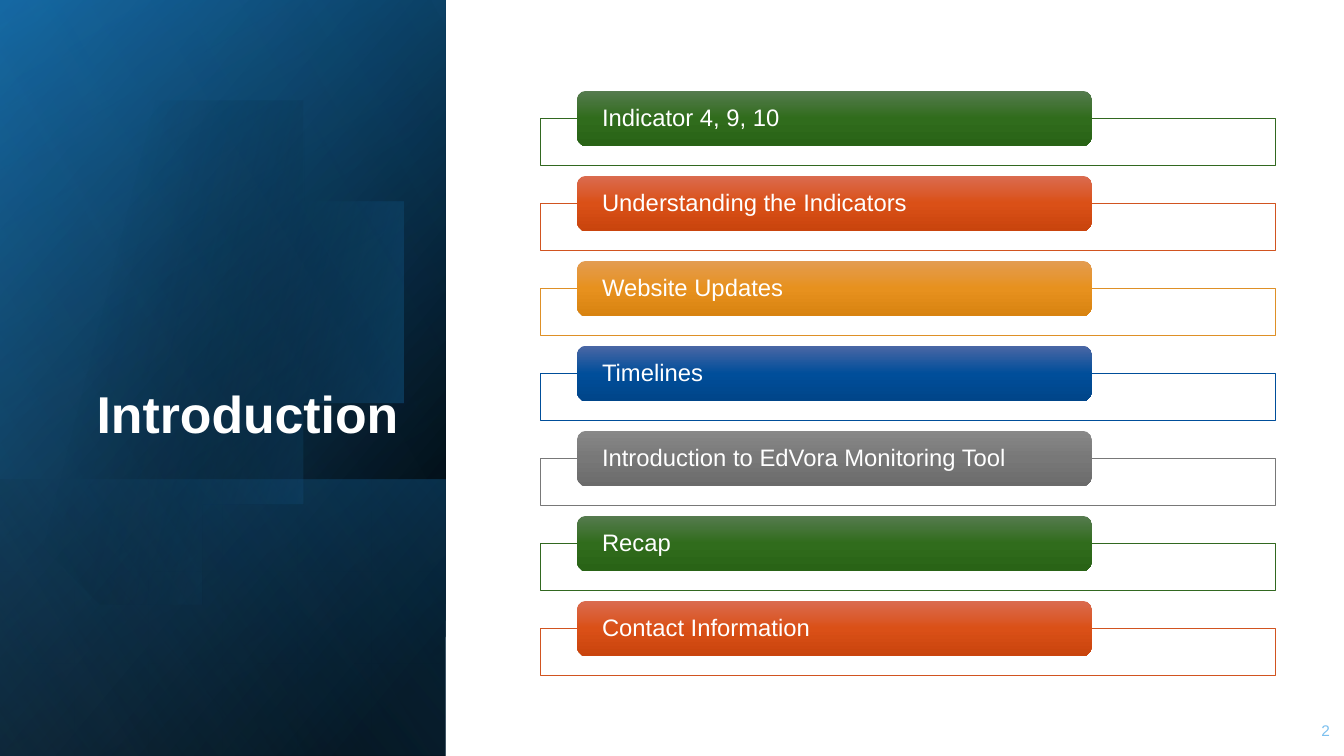
from math import cos, radians, sin

from pptx import Presentation
from pptx.dml.color import RGBColor
from pptx.enum.shapes import MSO_SHAPE
from pptx.enum.text import MSO_ANCHOR, PP_ALIGN
from pptx.oxml import parse_xml
from pptx.util import Inches, Pt

RECT, ROUND = MSO_SHAPE.RECTANGLE, MSO_SHAPE.ROUNDED_RECTANGLE
LEFT, RIGHT = PP_ALIGN.LEFT, PP_ALIGN.RIGHT
MIDDLE, BOTTOM = MSO_ANCHOR.MIDDLE, MSO_ANCHOR.BOTTOM
NS = "http://schemas.openxmlformats.org/drawingml/2006/main"
W, H = 13.33, 7.5
PANEL_W = 4.42
BAND_H = 2.74


def gradient(sp, stops, angle):
    sp.shadow.inherit = False
    sp.line.fill.background()
    gs = "".join(
        f'<a:gs pos="{pos * 1000}"><a:srgbClr val="{color}">'
        f'<a:alpha val="{alpha * 1000}"/></a:srgbClr></a:gs>'
        for pos, color, alpha in stops)
    fill = parse_xml(
        f'<a:gradFill xmlns:a="{NS}" rotWithShape="1"><a:gsLst>{gs}</a:gsLst>'
        f'<a:lin ang="{angle * 60000}" scaled="0"/></a:gradFill>')
    sp._element.spPr[1].addnext(fill)


def write(sp, text, size, color, align, anchor, bold=False):
    tf = sp.text_frame
    tf.word_wrap = True
    tf.vertical_anchor = anchor
    p = tf.paragraphs[0]
    p.alignment = align
    p.line_spacing = 0.9
    r = p.add_run()
    r.text = text
    r.font.name = "Arial"
    r.font.size = Pt(size)
    r.font.bold = bold
    r.font.color.rgb = RGBColor.from_string(color)
    return tf


prs = Presentation()
prs.slide_width, prs.slide_height = Inches(W), Inches(H)
s = prs.slides.add_slide(prs.slide_layouts[6])

panel_layers = [
    (H, [(8, "000000", 100), (100, "125C90", 100)], 50),
    (H, [(0, "000000", 0), (99, "187BC0", 46)], 30),
    (BAND_H, [(2, "187BC0", 29), (100, "000000", 30)], 130),
    (None, [(29, "000000", 0), (100, "187BC0", 43)], 14),
    (H, [(0, "000000", 0), (99, "62B3EB", 11)], 120),
]
CX, CY, RADIUS = 1.42, 3.38, 2.3
arc = [(CX + RADIUS * cos(radians(a)), CY + RADIUS * sin(radians(a)))
       for a in range(-128, 129, 2)]
for height, stops, angle in panel_layers:
    if height is None:
        fb = s.shapes.build_freeform(*arc[0], scale=Inches(1))
        fb.add_line_segments(arc[1:], close=True)
        sp = fb.convert_to_shape()
    else:
        sp = s.shapes.add_shape(
            RECT, Inches((PANEL_W - height) / 2), Inches(H - (height + PANEL_W) / 2),
            Inches(height), Inches(PANEL_W))
        sp.rotation = 90
        sp._element.spPr.xfrm.set("flipH", "1")
    gradient(sp, stops, angle)

title = s.shapes.add_textbox(Inches(0.64), Inches(1.84), Inches(3.41), Inches(2.62))
write(title, "Introduction", 37, "FFFFFF", RIGHT, BOTTOM, bold=True)
number = s.shapes.add_textbox(Inches(12.8), Inches(7.06), Inches(0.49), Inches(0.4))
write(number, "2", 11, "7CC0EF", RIGHT, MIDDLE)

GREEN = ("326820", "567B4F", "306C1C", "296316")
ORANGE = ("D15420", "DA6B4F", "DA5017", "C9440D")
AMBER = ("DE9027", "E39C52", "E7911E", "D88310")
BLUE = ("004E9A", "4B67A5", "004E9A", "004589")
GRAY = ("787878", "888888", "787878", "6B6B6B")
topics = [
    ("Indicator 4, 9, 10", GREEN),
    ("Understanding the Indicators", ORANGE),
    ("Website Updates", AMBER),
    ("Timelines", BLUE),
    ("Introduction to EdVora Monitoring Tool", GRAY),
    ("Recap", GREEN),
    ("Contact Information", ORANGE),
]
LIST_X, LIST_W = 5.36, 7.29
TOP, LAST_TOP = 0.9, 5.96
PILL_H, FRAME_H = 0.55, 0.47
pitch = (LAST_TOP - TOP) / (len(topics) - 1)
for i, (text, (line, *shades)) in enumerate(topics):
    y = TOP + i * pitch
    frame = s.shapes.add_shape(RECT, Inches(LIST_X), Inches(y + PILL_H / 2),
                               Inches(LIST_W), Inches(FRAME_H))
    frame.shadow.inherit = False
    frame.fill.solid()
    frame.fill.fore_color.rgb = RGBColor.from_string("FFFFFF")
    frame.line.color.rgb = RGBColor.from_string(line)
    frame.line.width = Pt(0.5)

    pill = s.shapes.add_shape(ROUND, Inches(LIST_X + LIST_W * 0.05), Inches(y),
                              Inches(LIST_W * 0.7), Inches(PILL_H))
    gradient(pill, [(pos, c, 100) for pos, c in zip((0, 50, 100), shades)], 90)
    tf = write(pill, text, 17, "FFFFFF", LEFT, MIDDLE)
    tf.margin_left = tf.margin_right = Inches(0.22)
    tf.margin_top = tf.margin_bottom = 0

prs.save("out.pptx")
